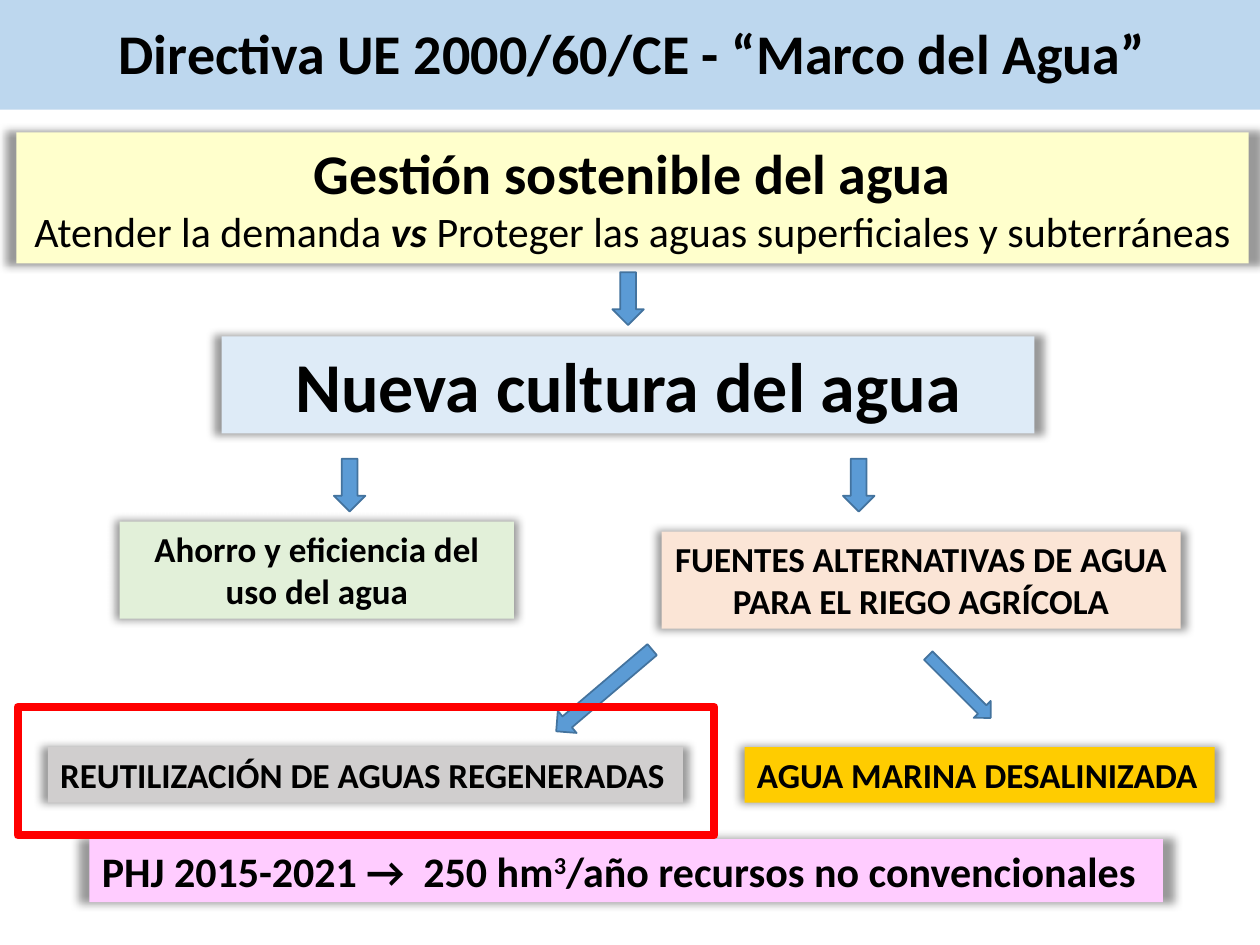
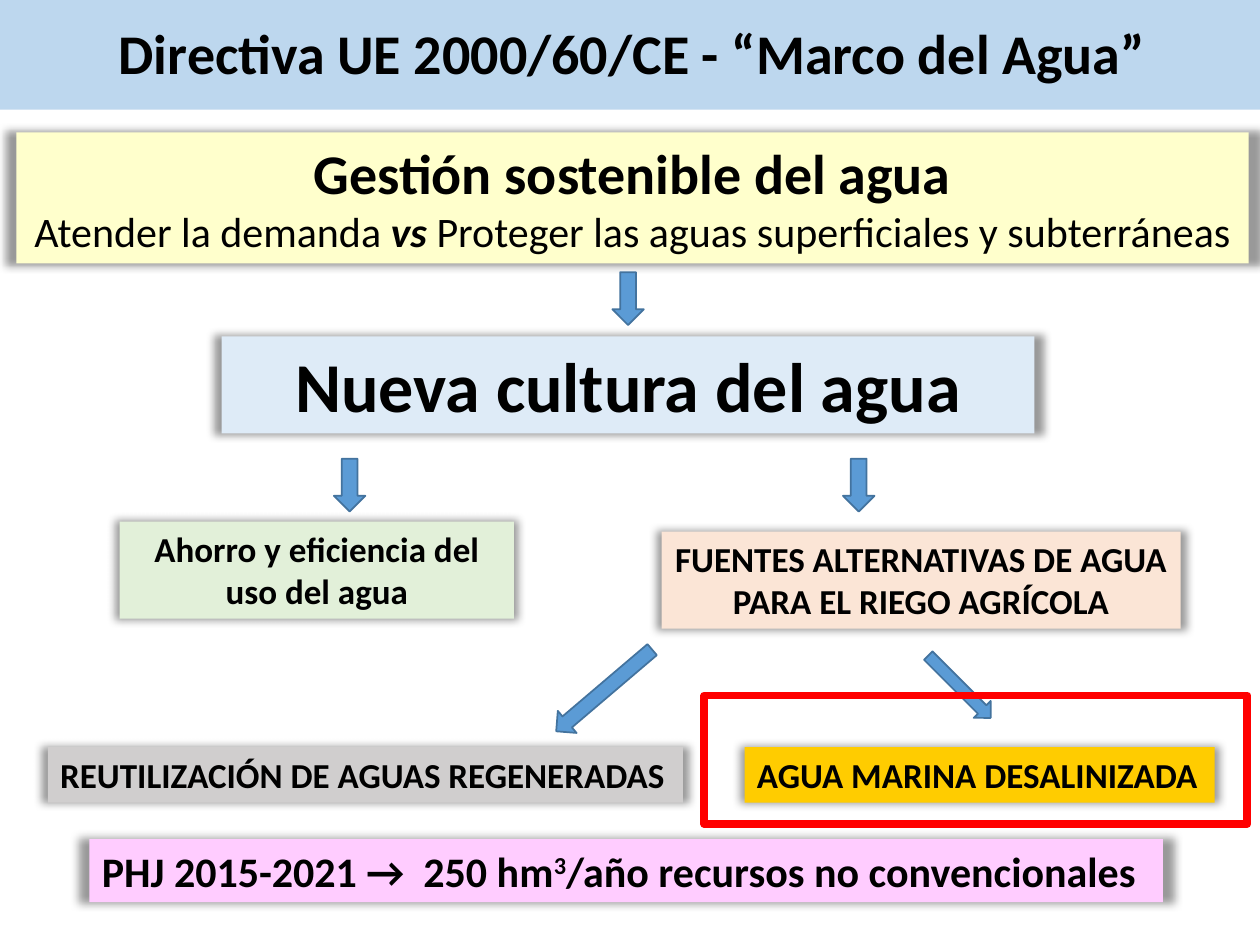
import dataclasses
import typing

import lxml.etree
import pptx
import pptx.dml.color
import pptx.enum.shapes
import pptx.enum.text
import pptx.oxml.ns
import pptx.util

COLS, ROWS = 100, 75
WIDE, HIGH = pptx.util.Inches(10), pptx.util.Inches(7.5)
KIND = pptx.enum.shapes.MSO_SHAPE
ALIGN = pptx.enum.text.PP_ALIGN
LEFT, MID = ALIGN.LEFT, ALIGN.CENTER


@dataclasses.dataclass(frozen=True)
class Theme:
    font: str = "Calibri"
    ink: str = "000000"
    band: str = "BDD7EE"
    arrow: str = "5B9BD5"
    edge: str = "43739E"
    mark: str = "FF0000"
    cream: str = "FFFFCC"
    sky: str = "DEEBF7"
    green: str = "E2F0D9"
    peach: str = "FBE5D6"
    gray: str = "D0CECE"
    gold: str = "FFCC00"
    pink: str = "FFCCFF"
    huge: int = 40
    large: int = 32
    text: int = 24
    small: int = 20
    thin: float = 1
    thick: float = 4.5


THEME = Theme()


class Area(typing.NamedTuple):
    """Place on the grid: first column and row, then columns and rows taken."""
    col: float
    row: float
    cols: float
    rows: float


class Part(typing.NamedTuple):
    text: str
    size: int
    bold: bool = True
    slant: bool = False
    lift: int = 0


@dataclasses.dataclass(frozen=True)
class Box:
    area: Area
    fill: str
    lines: list[list[Part]]
    align: ALIGN = MID
    wrap: bool = True


@dataclasses.dataclass(frozen=True)
class Arrow:
    area: Area
    turn: float = 0


def drop(col: float, row: float) -> Arrow:
    """Arrow that points straight down, in the common size."""
    return Arrow(Area(col, row, 2.5, 4.2))


FORK, LEAF = 36.4, 59.3
TITLE = [[Part("Directiva UE 2000/60/CE - “Marco del Agua”", THEME.large)]]
TITLE_AREA = Area(8.4, 1, 83.6, 6.4)
BAND = Area(0, 0, COLS, 8.7)

BOXES = [
    Box(Area(17.6, 26.7, 64.5, 7.7), THEME.sky,
        [[Part("Nueva cultura del agua", THEME.huge)]]),
    Box(Area(52.5, 42.2, 41.2, 7.7), THEME.peach,
        [[Part("FUENTES ALTERNATIVAS DE AGUA PARA EL RIEGO AGRÍCOLA", THEME.small)]]),
    Box(Area(9.5, 41.4, 31.3, 7.7), THEME.green,
        [[Part("Ahorro y eficiencia del uso del agua", THEME.small)]]),
    Box(Area(3.8, LEAF, 50.4, 4.4), THEME.gray,
        [[Part("REUTILIZACIÓN DE AGUAS REGENERADAS", THEME.small)]], LEFT, False),
    Box(Area(59.1, LEAF, 37.3, 4.4), THEME.gold,
        [[Part("AGUA MARINA DESALINIZADA", THEME.small)]], LEFT, False),
    Box(Area(7.1, 66.6, 85.2, 5), THEME.pink,
        [[Part("PHJ 2015-2021 →  250 hm", THEME.text),
          Part("3", THEME.text, lift=30),
          Part("/año recursos no convencionales", THEME.text)]], LEFT, False),
    Box(Area(1.3, 10.5, 97.8, 10.4), THEME.cream,
        [[Part("Gestión sostenible del agua", THEME.large)],
         [Part("Atender la demanda ", THEME.text, False),
          Part("vs", THEME.text, slant=True),
          Part(" Proteger las aguas superficiales y subterráneas", THEME.text, False)]],
        wrap=False),
]
ARROWS = [
    drop(48.6, 21.6),
    drop(26.5, FORK),
    drop(66.9, FORK),
    Arrow(Area(46.8, 49.8, 2.3, 10), 49.6),
    Arrow(Area(75.2, 51, 1.9, 7), 315),
]
MARKS = [Area(1.4, 56.1, 55.3, 10.2), Area(55.9, 55.2, 43.1, 10.2)]


def place(area: Area) -> tuple[int, int, int, int]:
    """Turn grid steps into lengths."""
    col, row = WIDE / COLS, HIGH / ROWS
    return (round(area.col * col), round(area.row * row),
            round(area.cols * col), round(area.rows * row))


def tint(code: str) -> pptx.dml.color.RGBColor:
    return pptx.dml.color.RGBColor.from_string(code)


def draw(slide, kind: KIND, area: Area, fill: str = "", edge: str = "", width: float = 0):
    """Add a flat shape; an empty colour means no fill or no line."""
    shape = slide.shapes.add_shape(kind, *place(area))
    shape.shadow.inherit = False
    if fill:
        shape.fill.solid()
        shape.fill.fore_color.rgb = tint(fill)
    else:
        shape.fill.background()
    if edge:
        shape.line.color.rgb = tint(edge)
        shape.line.width = pptx.util.Pt(width)
    else:
        shape.line.fill.background()
    return shape


def shade(shape) -> None:
    """Give the shape a soft shadow, slightly larger than itself."""
    name = pptx.oxml.ns.qn
    glow = shape.element.spPr.find(name("a:effectLst"))
    cast = lxml.etree.SubElement(glow, name("a:outerShdw"), blurRad="63500",
                                 sx="102000", sy="102000", algn="ctr", rotWithShape="0")
    color = lxml.etree.SubElement(cast, name("a:srgbClr"), val=THEME.ink)
    lxml.etree.SubElement(color, name("a:alpha"), val="40000")


def write(shape, lines: list[list[Part]], align: ALIGN = MID, wrap: bool = True) -> None:
    frame = shape.text_frame
    frame.word_wrap = wrap
    frame.auto_size = pptx.enum.text.MSO_AUTO_SIZE.SHAPE_TO_FIT_TEXT
    frame.vertical_anchor = pptx.enum.text.MSO_ANCHOR.TOP
    for rank, parts in enumerate(lines):
        para = frame.add_paragraph() if rank else frame.paragraphs[0]
        para.alignment = align
        for part in parts:
            run = para.add_run()
            run.text = part.text
            font = run.font
            font.name, font.size = THEME.font, pptx.util.Pt(part.size)
            font.bold, font.italic = part.bold, part.slant
            font.color.rgb = tint(THEME.ink)
            if part.lift:
                run._r.get_or_add_rPr().set("baseline", str(part.lift * 1000))


def head(slide) -> None:
    """Draw the top band and set the title over it."""
    band = draw(slide, KIND.RECTANGLE, BAND, THEME.band)
    title = slide.shapes.title
    title.left, title.top, title.width, title.height = place(TITLE_AREA)
    write(title, TITLE)
    band.element.addnext(title.element)


def build(deck, mark: Area) -> None:
    """Add the water scheme with one of its sources marked."""
    slide = deck.slides.add_slide(deck.slide_layouts[5])
    for box in BOXES:
        shape = draw(slide, KIND.RECTANGLE, box.area, box.fill)
        shade(shape)
        write(shape, box.lines, box.align, box.wrap)
    for arrow in ARROWS:
        shape = draw(slide, KIND.DOWN_ARROW, arrow.area, THEME.arrow, THEME.edge, THEME.thin)
        shape.rotation = arrow.turn
    head(slide)
    draw(slide, KIND.RECTANGLE, mark, edge=THEME.mark, width=THEME.thick)


def main() -> None:
    deck = pptx.Presentation()
    deck.slide_width, deck.slide_height = WIDE, HIGH
    for mark in MARKS:
        build(deck, mark)
    deck.save("out.pptx")


if __name__ == "__main__":
    main()
